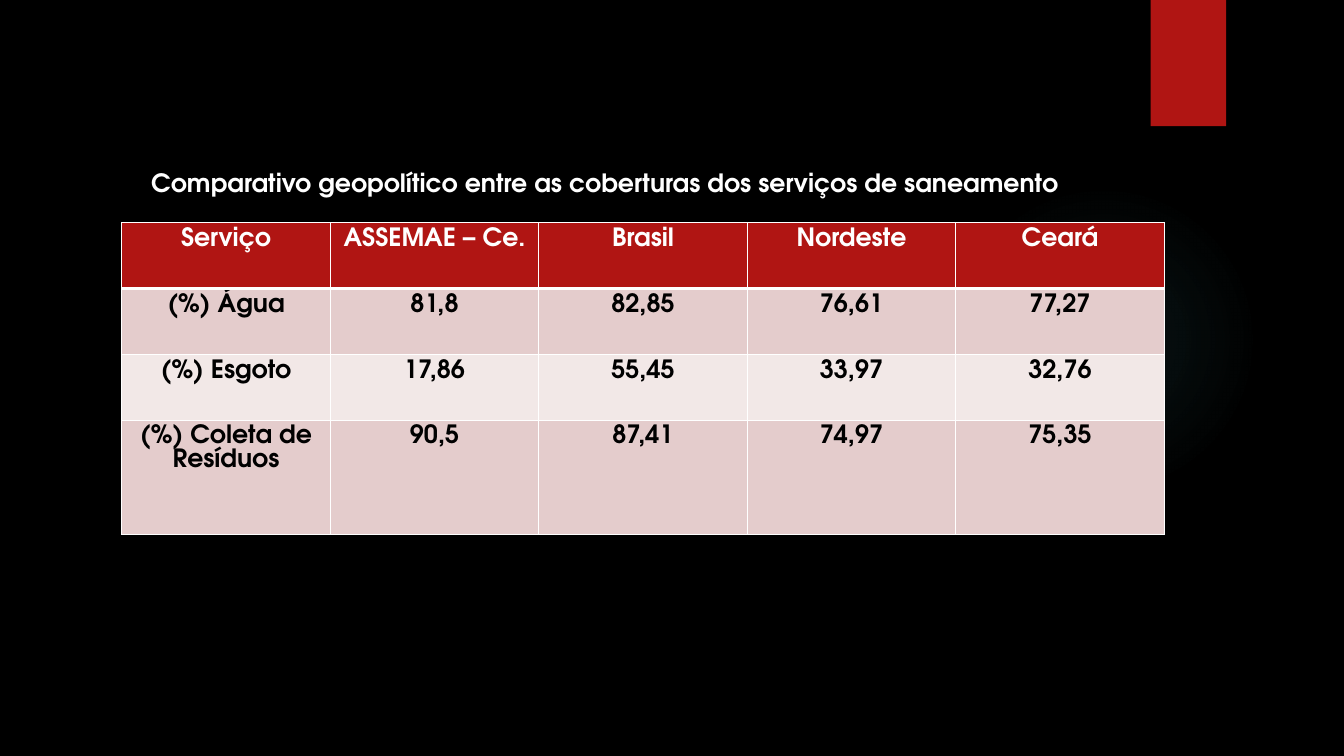
from dataclasses import dataclass

from lxml import etree
from pptx import Presentation
from pptx import util as u
from pptx.dml.color import RGBColor
from pptx.enum import shapes, text
from pptx.oxml import ns, parse_xml


@dataclass(frozen=True)
class Theme:
    font: str = "TeX Gyre Adventor"
    size: int = 18
    background: str = "000000"
    accent: str = "B01513"
    glow: str = "50B9C1"
    light: str = "FFFFFF"
    dark: str = "000000"
    bands: tuple = ("E4CCCC", "F2E8E7")


theme = Theme()
DRAWING = ns.nsdecls("a")


def style_text(paragraph, color):
    for run in paragraph.runs:
        run.font.name = theme.font
        run.font.size = u.Pt(theme.size)
        run.font.bold = True
        run.font.color.rgb = RGBColor.from_string(color)


def set_borders(cell, bottom_width):
    """Draw light lines around a cell, ahead of its fill in the XML."""
    properties = cell._tc.get_or_add_tcPr()
    widths = {"lnL": 1, "lnR": 1, "lnT": 1, "lnB": bottom_width}
    for position, (side, width) in enumerate(widths.items()):
        properties.insert(position, parse_xml(
            f'<a:{side} {DRAWING} w="{u.Pt(width)}"><a:solidFill>'
            f'<a:srgbClr val="{theme.light}"/></a:solidFill></a:{side}>'))


deck = Presentation()
deck.slide_width, deck.slide_height = u.Cm(33.87), u.Cm(19.05)
slide = deck.slides.add_slide(deck.slide_layouts[6])
slide.background.fill.solid()
slide.background.fill.fore_color.rgb = RGBColor.from_string(theme.background)

# Soft glow behind the table
glow = slide.shapes.add_shape(
    shapes.MSO_SHAPE.OVAL, u.Cm(23.9), u.Cm(4.65), u.Cm(7.82), u.Cm(7.82))
glow.shadow.inherit = False
glow.line.fill.background()
stops = "".join(
    f'<a:gs pos="{place * 1000}"><a:srgbClr val="{theme.glow}">'
    f'<a:alpha val="{alpha * 1000}"/></a:srgbClr></a:gs>'
    for place, alpha in ((0, 7), (36, 6), (69, 0), (100, 0)))
glow._element.spPr.find(ns.qn("a:prstGeom")).addnext(parse_xml(
    f'<a:gradFill {DRAWING}><a:gsLst>{stops}</a:gsLst><a:path path="circle">'
    '<a:fillToRect l="50000" t="50000" r="50000" b="50000"/></a:path></a:gradFill>'))

# Ribbon at the top edge
ribbon = slide.shapes.add_shape(
    shapes.MSO_SHAPE.RECTANGLE, u.Cm(29), 0, u.Cm(1.9), u.Cm(3.18))
ribbon.fill.solid()
ribbon.fill.fore_color.rgb = RGBColor.from_string(theme.accent)
ribbon.line.fill.background()
ribbon.shadow.inherit = False
effects = ribbon._element.spPr.find(ns.qn("a:effectLst"))
shadow = etree.SubElement(
    effects, ns.qn("a:outerShdw"), blurRad=str(u.Pt(3)), dist=str(u.Pt(2)),
    dir="5400000", rotWithShape="0")
shadow_color = etree.SubElement(shadow, ns.qn("a:srgbClr"), val=theme.dark)
etree.SubElement(shadow_color, ns.qn("a:alpha"), val="45000")

# Coverage table
coverage = (
    ("Serviço", "ASSEMAE – Ce.", "Brasil", "Nordeste", "Ceará"),
    ("(%) Água", "81,8", "82,85", "76,61", "77,27"),
    ("(%) Esgoto", "17,86", "55,45", "33,97", "32,76"),
    ("(%) Coleta de Resíduos", "90,5", "87,41", "74,97", "75,35"),
)
row_heights = (1.66, 1.66, 1.66, 2.87)
table = slide.shapes.add_table(
    len(coverage), len(coverage[0]), u.Cm(3.07), u.Cm(5.61),
    u.Cm(26.27), u.Cm(sum(row_heights))).table
for row, height in zip(table.rows, row_heights):
    row.height = u.Cm(height)

for r, values in enumerate(coverage):
    is_header = r == 0
    for c, value in enumerate(values):
        cell = table.cell(r, c)
        cell.fill.solid()
        cell.fill.fore_color.rgb = RGBColor.from_string(
            theme.accent if is_header else theme.bands[(r - 1) % 2])
        set_borders(cell, 3 if is_header else 1)
        cell.text_frame.text = value
        label = cell.text_frame.paragraphs[0]
        label.alignment = text.PP_ALIGN.CENTER
        style_text(label, theme.light if is_header else theme.dark)

# Table title
title = slide.shapes.add_textbox(
    u.Cm(3.56), u.Cm(4.09), u.Cm(25.3), u.Cm(1.02)).text_frame
title.word_wrap = True
title.text = "Comparativo geopolítico entre as coberturas dos serviços de saneamento"
style_text(title.paragraphs[0], theme.light)

deck.save("out.pptx")
